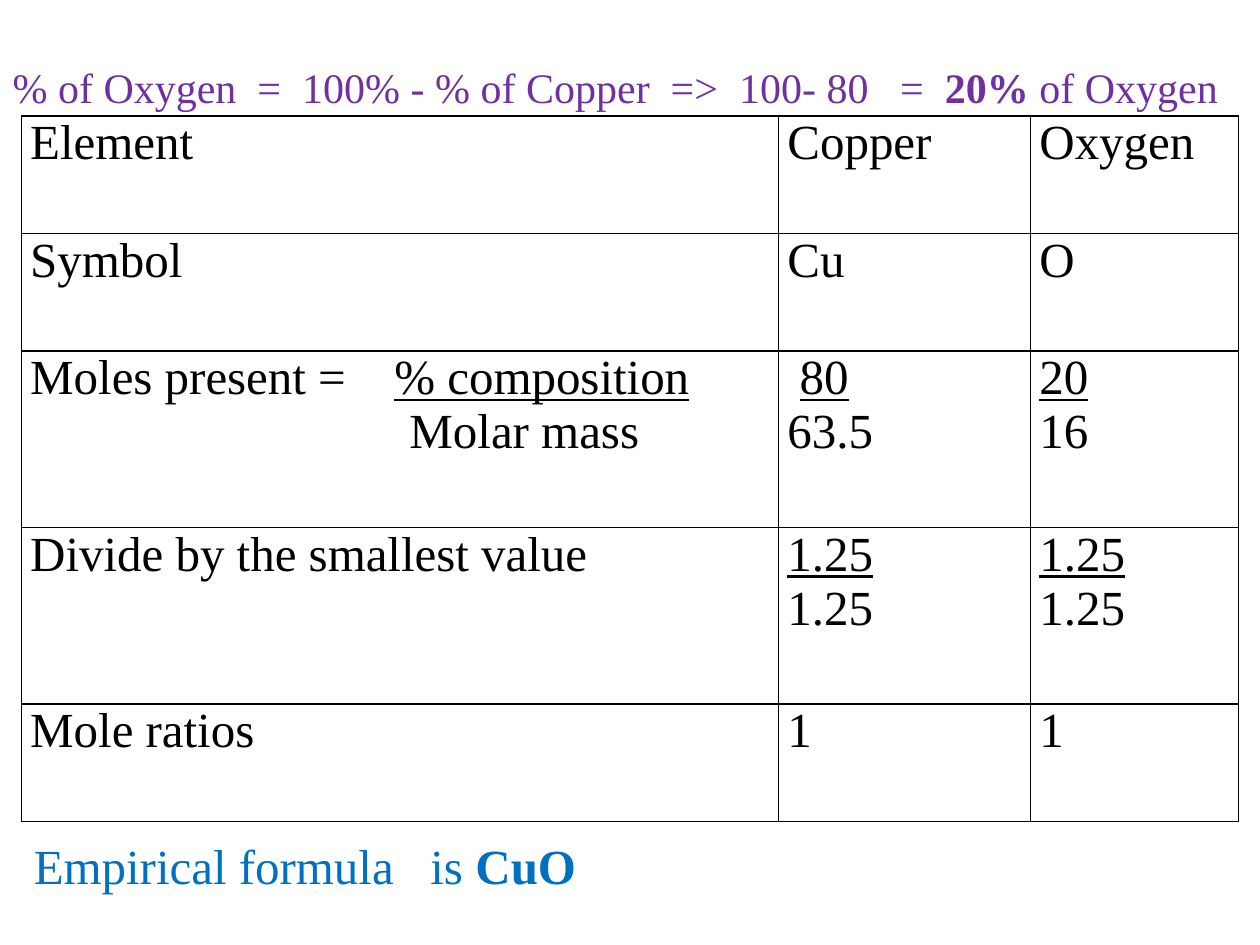
import pptx
import pptx.dml.color
import pptx.enum.text
import pptx.oxml.ns
import pptx.util
from lxml import etree

Inches = pptx.util.Inches
Pt = pptx.util.Pt
RGBColor = pptx.dml.color.RGBColor
ANCHOR = pptx.enum.text.MSO_ANCHOR
ALIGN = pptx.enum.text.PP_ALIGN
qn = pptx.oxml.ns.qn

FONT = "Times New Roman"
BLACK = RGBColor(0x00, 0x00, 0x00)
PURPLE = RGBColor(0x70, 0x30, 0xA0)
BLUE = RGBColor(0x00, 0x70, 0xC0)

COLUMN_WIDTHS = (6.01, 2, 1.65)
ROW_UNITS = (2, 2, 3, 3, 2)
FRACTION_TAB = Inches(2.89)
DENOMINATOR_INDENT = Inches(3.01)
ROWS = (
    ("Element", "Copper", "Oxygen"),
    ("Symbol", "Cu", "O"),
    (("Moles present =\t", "% composition", "Molar mass"),
     (" ", "80", "63.5"), ("", "20", "16")),
    ("Divide by the smallest value",
     ("", "1.25", "1.25"), ("", "1.25", "1.25")),
    ("Mole ratios", "1", "1"),
)


def style_paragraph(paragraph, size, color):
    paragraph.alignment = ALIGN.LEFT
    paragraph.font.name = FONT
    paragraph.font.size = Pt(size)
    paragraph.font.color.rgb = color


def add_runs(paragraph, runs):
    for text, bold in runs:
        run = paragraph.add_run()
        run.text = text
        run.font.bold = bold


def place(shape, box):
    shape.left, shape.top, shape.width, shape.height = map(Inches, box)


def write_calculation(slide, box):
    title = slide.shapes.title
    place(title, box)
    frame = title.text_frame
    frame.vertical_anchor = ANCHOR.TOP
    frame.margin_top = Inches(0.49)
    paragraph = frame.paragraphs[0]
    paragraph.line_spacing = 1.0
    style_paragraph(paragraph, 24, PURPLE)
    add_runs(paragraph, (
        ("% of Oxygen  =  100% - % of Copper  =>  100- 80   =  ", False),
        ("20% ", True), ("of Oxygen", False)))


def write_fraction(frame, lead, numerator, denominator):
    top = frame.paragraphs[0]
    if lead:
        top.add_run().text = lead
    run = top.add_run()
    run.text = numerator
    run.font.underline = True
    bottom = frame.add_paragraph()
    bottom.text = denominator
    if "\t" in lead:
        tabs = etree.SubElement(top._p.get_or_add_pPr(), qn("a:tabLst"))
        etree.SubElement(tabs, qn("a:tab"), pos=str(FRACTION_TAB), algn="l")
        bottom._p.get_or_add_pPr().set("marL", str(DENOMINATOR_INDENT))


def draw_borders(cell):
    properties = cell._tc.get_or_add_tcPr()
    for index, side in enumerate(("a:lnL", "a:lnR", "a:lnT", "a:lnB")):
        line = etree.Element(qn(side), w=str(Pt(1)))
        fill = etree.SubElement(line, qn("a:solidFill"))
        etree.SubElement(fill, qn("a:srgbClr"), val=str(BLACK))
        properties.insert(index, line)


def fill_cell(cell, content):
    cell.margin_left = cell.margin_right = Inches(0.07)
    cell.margin_top = cell.margin_bottom = 0
    cell.fill.background()
    draw_borders(cell)
    if isinstance(content, str):
        cell.text = content
    else:
        write_fraction(cell.text_frame, *content)
    for paragraph in cell.text_frame.paragraphs:
        style_paragraph(paragraph, 28, BLACK)


def add_mole_table(slide, box):
    table = slide.shapes.add_table(
        len(ROWS), len(COLUMN_WIDTHS), *map(Inches, box)).table
    table.first_row = table.horz_banding = False
    for column, width in zip(table.columns, COLUMN_WIDTHS):
        column.width = Inches(width)
    unit = box[3] / sum(ROW_UNITS)
    for row, units, contents in zip(table.rows, ROW_UNITS, ROWS):
        row.height = Inches(units * unit)
        for cell, content in zip(row.cells, contents):
            fill_cell(cell, content)


def add_result(slide, box):
    frame = slide.shapes.add_textbox(*map(Inches, box)).text_frame
    frame.word_wrap = True
    frame.vertical_anchor = ANCHOR.MIDDLE
    paragraph = frame.paragraphs[0]
    style_paragraph(paragraph, 28, BLUE)
    add_runs(paragraph, (("Empirical formula   is ", False), ("CuO", True)))


def main():
    presentation = pptx.Presentation()
    presentation.slide_width = Inches(10)
    presentation.slide_height = Inches(7.5)
    slide = presentation.slides.add_slide(presentation.slide_layouts[5])
    add_mole_table(slide, (0.17, 0.92, sum(COLUMN_WIDTHS), 5.6))
    add_result(slide, (0.17, 6.58, 9.42, 0.57))
    write_calculation(slide, (0, 0, 10, 1.31))
    presentation.save("out.pptx")


if __name__ == "__main__":
    main()
